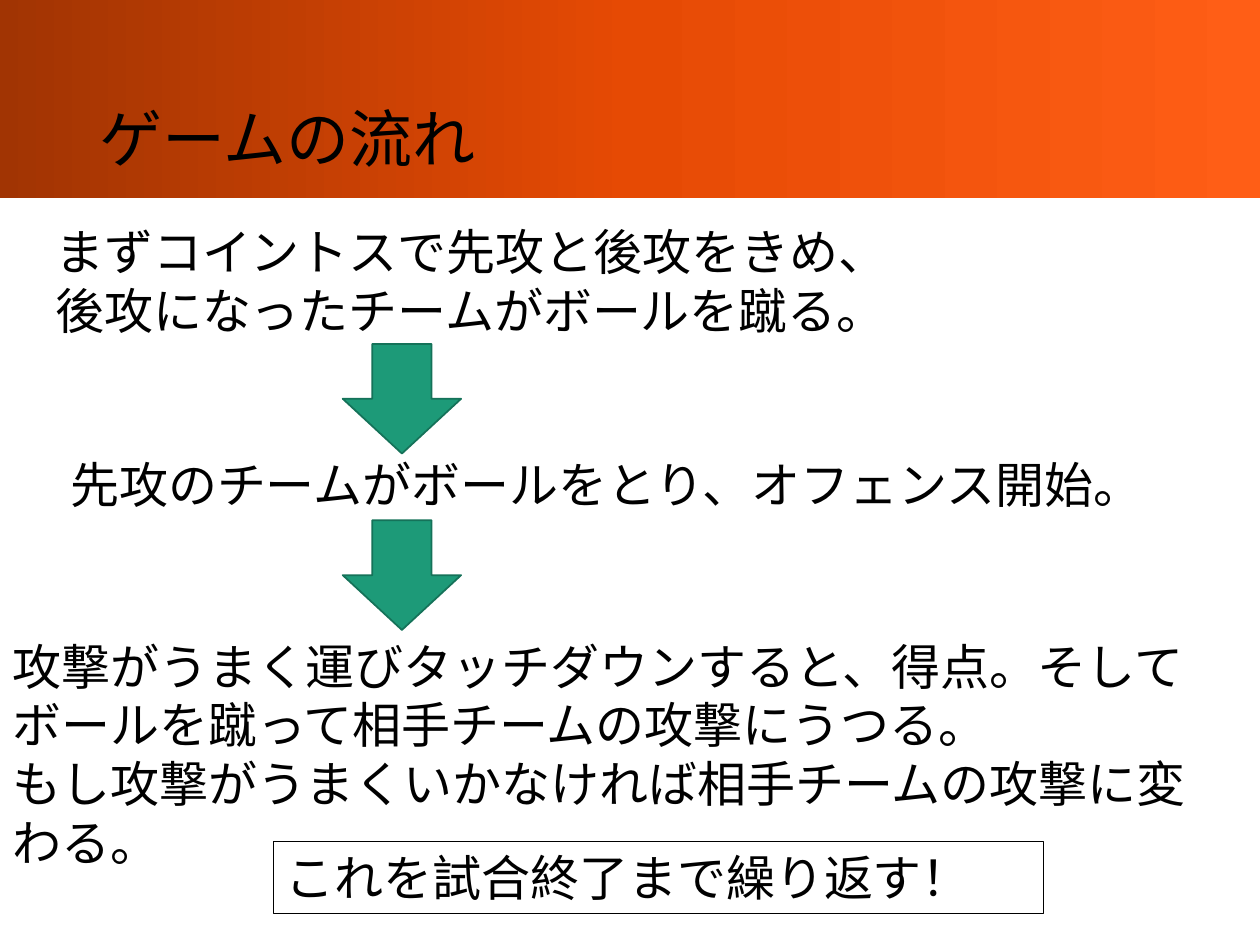
from copy import deepcopy

from pptx import Presentation
from pptx.dml.color import RGBColor
from pptx.enum.shapes import MSO_SHAPE
from pptx.enum.text import MSO_ANCHOR, MSO_AUTO_SIZE, PP_ALIGN
from pptx.util import Inches, Pt

RECT, DOWN_ARROW = MSO_SHAPE.RECTANGLE, MSO_SHAPE.DOWN_ARROW
GROW, NO_FIT = MSO_AUTO_SIZE.SHAPE_TO_FIT_TEXT, MSO_AUTO_SIZE.NONE
TOP, MIDDLE, LEFT = MSO_ANCHOR.TOP, MSO_ANCHOR.MIDDLE, PP_ALIGN.LEFT

# Content
FONT = "Calibri"
WIDTH, HEIGHT = 10, 7.5
COLORS = {"text": "000000", "arrow": "1D9A78", "arrow_line": "157259"}
BAND_STOPS = [(0, "A13403"), (0.5, "E64A04"), (1, "FF5E16")]
TITLE = "ゲームの流れ"
# Each step: left, top, width, height, wraps, paragraphs
STEPS = [
    (0.34, 1.71, 6.88, 1.04, False,
     ["まずコイントスで先攻と後攻をきめ、", "後攻になったチームがボールを蹴る。"]),
    (0.46, 3.56, 8.84, 0.57, False,
     ["先攻のチームがボールをとり、オフェンス開始。"]),
    (0, 5, 9.88, 2.46, True,
     ["攻撃がうまく運びタッチダウンすると、得点。そして",
      "ボールを蹴って相手チームの攻撃にうつる。",
      "もし攻撃がうまくいかなければ相手チームの攻撃に変わる。"]),
]
CONCLUSION = "これを試合終了まで繰り返す！"
ARROW_LEFT, ARROW_W, ARROW_H = 2.72, 0.94, 0.87


def rgb(name):
    return RGBColor.from_string(COLORS.get(name, name))


def box(*lengths):
    return [Inches(n) for n in lengths]


def write(tf, lines, size, anchor=TOP, wrap=True, fit=GROW):
    tf.word_wrap, tf.auto_size, tf.vertical_anchor = wrap, fit, anchor
    for i, line in enumerate(lines):
        p = tf.paragraphs[0] if i == 0 else tf.add_paragraph()
        p.alignment = LEFT
        r = p.add_run()
        r.text = line
        r.font.name, r.font.size = FONT, Pt(size)
        r.font.color.rgb = rgb("text")


def add_shape(s, kind, at):
    sp = s.shapes.add_shape(kind, *box(*at))
    sp.shadow.inherit = False
    return sp


prs = Presentation()
prs.slide_width, prs.slide_height = box(WIDTH, HEIGHT)
s = prs.slides.add_slide(prs.slide_layouts[5])

# Gradient band behind the title
band = add_shape(s, RECT, (0, 0, WIDTH, 1.57))
band.line.fill.background()
band.fill.gradient()
band.fill.gradient_angle = 0
last_stop = band.fill._fill._gradFill.gsLst[-1]
last_stop.addnext(deepcopy(last_stop))
for stop, (position, color) in zip(band.fill.gradient_stops, BAND_STOPS):
    stop.position = position
    stop.color.rgb = rgb(color)
s.shapes.title._element.addprevious(band._element)

# Title
title = s.shapes.title
title.left, title.top, title.width, title.height = box(0.69, 0.4, 8.62, 1.45)
write(title.text_frame, [TITLE], 36, anchor=MIDDLE, fit=NO_FIT)
title.text_frame.paragraphs[0].line_spacing = 0.9

# Steps, each followed by an arrow that leads to the next
for i, (left, top, width, height, wrap, lines) in enumerate(STEPS):
    step = s.shapes.add_textbox(*box(left, top, width, height))
    write(step.text_frame, lines, 28, wrap=wrap)
    if i < len(STEPS) - 1:
        arrow_top = top + height - (0.02 if i == 0 else 0)
        arrow = add_shape(s, DOWN_ARROW, (ARROW_LEFT, arrow_top, ARROW_W, ARROW_H))
        arrow.fill.solid()
        arrow.fill.fore_color.rgb = rgb("arrow")
        arrow.line.color.rgb = rgb("arrow_line")
        arrow.line.width = Pt(1)

# Framed conclusion
frame = add_shape(s, RECT, (2.17, 6.68, 6.11, 0.57))
frame.fill.background()
frame.line.color.rgb = rgb("text")
frame.line.width = Pt(0.75)
write(frame.text_frame, [CONCLUSION], 28)

prs.save("out.pptx")
